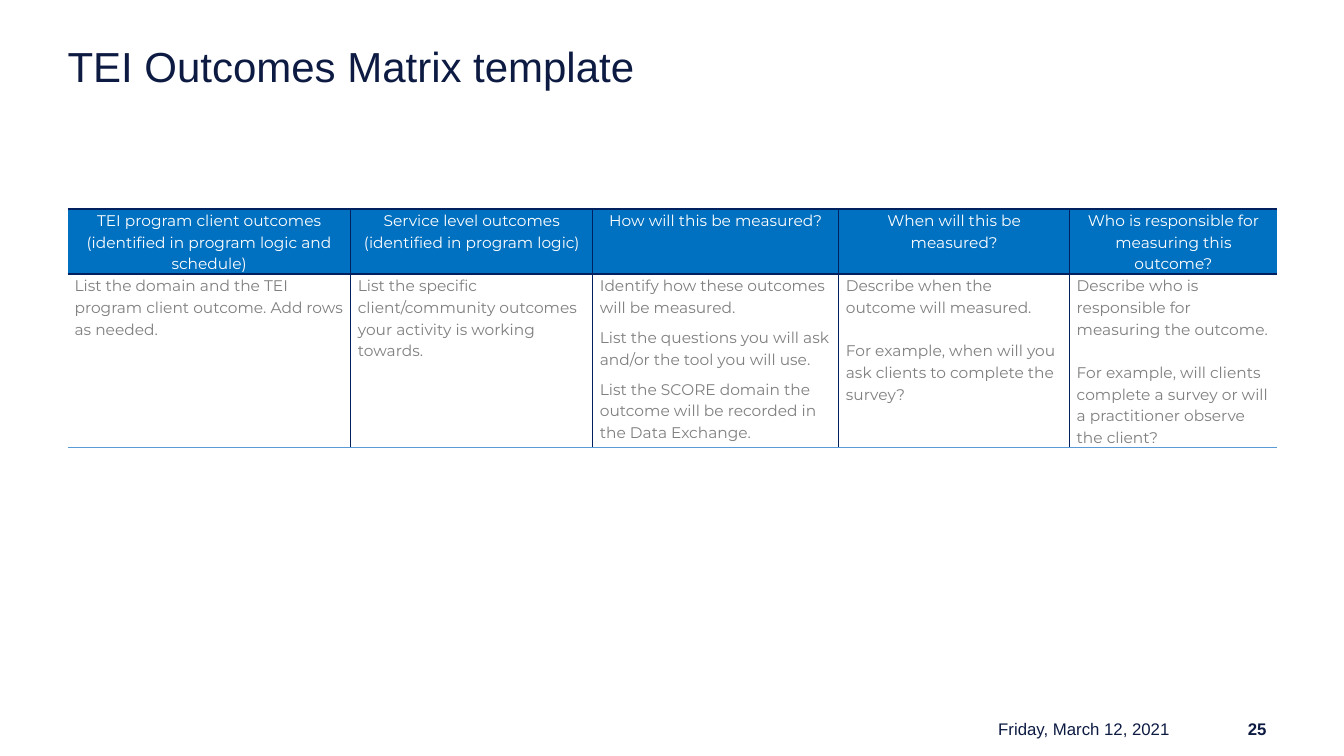
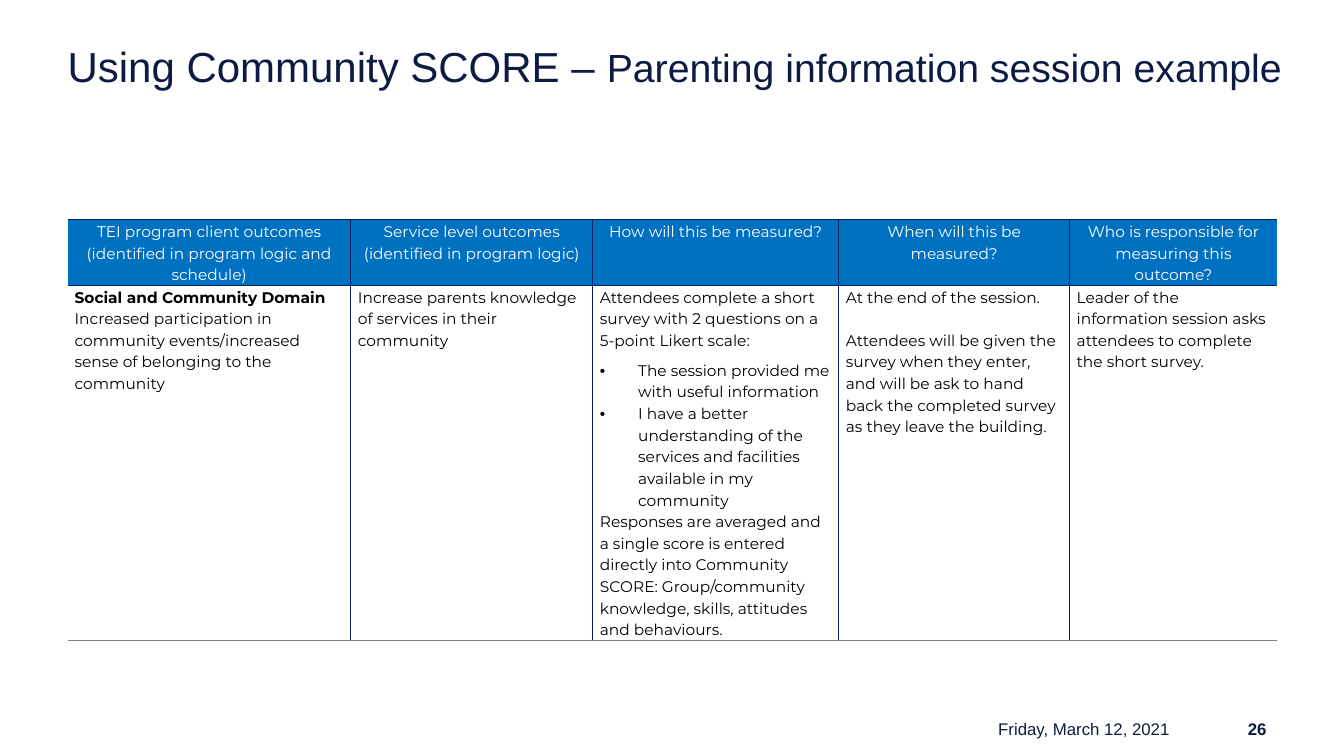
from pptx import Presentation
from pptx.dml.color import RGBColor
from pptx.enum.text import MSO_ANCHOR, PP_ALIGN
from pptx.oxml.ns import qn
from pptx.util import Inches, Pt
from lxml.etree import SubElement

COLORS = {
    "navy": "0D1B43",
    "border": "002060",
    "header": "0070C0",
    "sky": "5B9BD5",
    "grey": "7F7F7F",
    "white": "FFFFFF",
    "black": "000000",
}
LEFT = 0.67
COLUMN_WIDTHS = [2.81, 2.4, 2.44, 2.29, 2.06]
HEADER_HEIGHT = 0.65
LINE_GAP = 15.5
SMALL_GAP = 6
HEADERS = [
    ["TEI program client outcomes", "(identified in program logic and schedule)"],
    ["Service level outcomes", "(identified in program logic)"],
    ["How will this be measured?"],
    ["When will this be measured?"],
    ["Who is responsible for measuring this outcome?"],
]
SLIDES = [
    {
        "title": [("TEI Outcomes Matrix template", 30)],
        "number": "25",
        "top": 2.07,
        "height": 1.72,
        "color": "grey",
        "rule": 1.5,
        "bottom": "sky",
        "cells": [
            [("List the domain and the TEI program client outcome. Add rows as needed.", {})],
            [("List the specific client/community outcomes your activity is working towards.", {})],
            [
                ("Identify how these outcomes will be measured.", {}),
                ("List the questions you will ask and/or the tool you will use.", {"before": SMALL_GAP}),
                ("List the SCORE domain the outcome will be recorded in the Data Exchange.",
                 {"before": SMALL_GAP}),
            ],
            [
                ("Describe when the outcome will measured.", {}),
                ("For example, when will you ask clients to complete the survey?", {"before": LINE_GAP}),
            ],
            [
                ("Describe who is responsible for measuring the outcome.", {}),
                ("For example, will clients complete a survey or will a practitioner observe the client?",
                 {"before": LINE_GAP}),
            ],
        ],
    },
    {
        "title": [("Using Community SCORE – ", 30), ("Parenting information session example", 28)],
        "number": "26",
        "top": 2.18,
        "height": 3.52,
        "color": "black",
        "rule": 0.75,
        "bottom": "grey",
        "cells": [
            [
                ("Social and Community Domain", {"bold": True}),
                ("Increased participation in community events/increased sense of belonging to the community", {}),
            ],
            [("Increase parents knowledge of services in their community", {})],
            [
                ("Attendees complete a short survey with 2 questions on a 5-point Likert scale:", {}),
                ("The session provided me with useful information", {"before": SMALL_GAP, "bullet": True}),
                ("I have a better understanding of the services and facilities available in my community",
                 {"bullet": True}),
                ("Responses are averaged and a single score is entered directly into Community SCORE: "
                 "Group/community knowledge, skills, attitudes and behaviours.", {}),
            ],
            [
                ("At the end of the session.", {}),
                ("Attendees will be given the survey when they enter, and will be ask to hand back "
                 "the completed survey as they leave the building.", {"before": LINE_GAP}),
            ],
            [("Leader of the information session asks attendees to complete the short survey.", {})],
        ],
    },
]


def add_span(para, text, size, color, font="Arial", bold=False):
    span = para.add_run()
    span.text = text
    span.font.name = font
    span.font.size = Pt(size)
    span.font.bold = bold
    span.font.color.rgb = RGBColor.from_string(COLORS[color])


def fill_cell(cell, paragraphs, color, fill, align, borders):
    cell.margin_left = cell.margin_right = Inches(0.07)
    cell.margin_top = cell.margin_bottom = 0
    properties = cell._tc.get_or_add_tcPr()
    for side, (line_color, width) in zip("LRTB", borders):
        line = SubElement(properties, qn(f"a:ln{side}"), w=str(Pt(width)))
        if line_color:
            solid = SubElement(line, qn("a:solidFill"))
            SubElement(solid, qn("a:srgbClr"), val=COLORS[line_color])
        else:
            SubElement(line, qn("a:noFill"))
    cell.fill.solid()
    cell.fill.fore_color.rgb = RGBColor.from_string(COLORS[fill])
    for index, (text, style) in enumerate(paragraphs):
        frame = cell.text_frame
        para = frame.add_paragraph() if index else frame.paragraphs[0]
        para.alignment = align
        para.line_spacing = 1.15
        if "before" in style:
            para.space_before = Pt(style["before"])
        if style.get("bullet"):
            settings = para._p.get_or_add_pPr()
            settings.set("marL", str(Inches(0.38)))
            settings.set("indent", str(Inches(-0.38)))
            SubElement(settings, qn("a:buFont"), typeface="Arial")
            SubElement(settings, qn("a:buChar"), char="•")
        add_span(para, text, 11, color, "Montserrat", style.get("bold", False))


deck = Presentation()
deck.slide_width = Inches(13.33)
deck.slide_height = Inches(7.5)

for content in SLIDES:
    page = deck.slides.add_slide(deck.slide_layouts[6])

    title_box = page.shapes.add_textbox(Inches(LEFT), Inches(0.4), Inches(12.21), Inches(0.66))
    title = title_box.text_frame
    title.word_wrap = True
    title.margin_left = title.margin_right = title.margin_top = title.margin_bottom = 0
    for text, size in content["title"]:
        add_span(title.paragraphs[0], text, size, "navy")

    footers = [(content["number"], 11.57, 1.09, True), ("Friday, March 12, 2021", 8.59, 3.11, False)]
    for text, left, width, bold in footers:
        footer_box = page.shapes.add_textbox(Inches(left), Inches(7.12), Inches(width), Inches(0.23))
        footer = footer_box.text_frame
        footer.word_wrap = True
        footer.vertical_anchor = MSO_ANCHOR.MIDDLE
        footer.paragraphs[0].alignment = PP_ALIGN.RIGHT
        add_span(footer.paragraphs[0], text, 12, "navy", bold=bold)

    table = page.shapes.add_table(
        2, len(COLUMN_WIDTHS), Inches(LEFT), Inches(content["top"]),
        Inches(sum(COLUMN_WIDTHS)), Inches(HEADER_HEIGHT + content["height"]),
    ).table
    table.first_row = False
    table.horz_banding = False
    table.rows[0].height = Inches(HEADER_HEIGHT)
    table.rows[1].height = Inches(content["height"])
    rule = ("border", content["rule"])
    bottom = (content["bottom"], content["rule"])
    for column, width in enumerate(COLUMN_WIDTHS):
        table.columns[column].width = Inches(width)
        last = len(COLUMN_WIDTHS) - 1
        sides = [("border" if column > 0 else None, 0.75), ("border" if column < last else None, 0.75)]
        header = [(text, {}) for text in HEADERS[column]]
        fill_cell(table.cell(0, column), header, "white", "header", PP_ALIGN.CENTER, sides + [rule, rule])
        fill_cell(table.cell(1, column), content["cells"][column], content["color"], "white",
                  PP_ALIGN.LEFT, sides + [rule, bottom])

deck.save("out.pptx")
